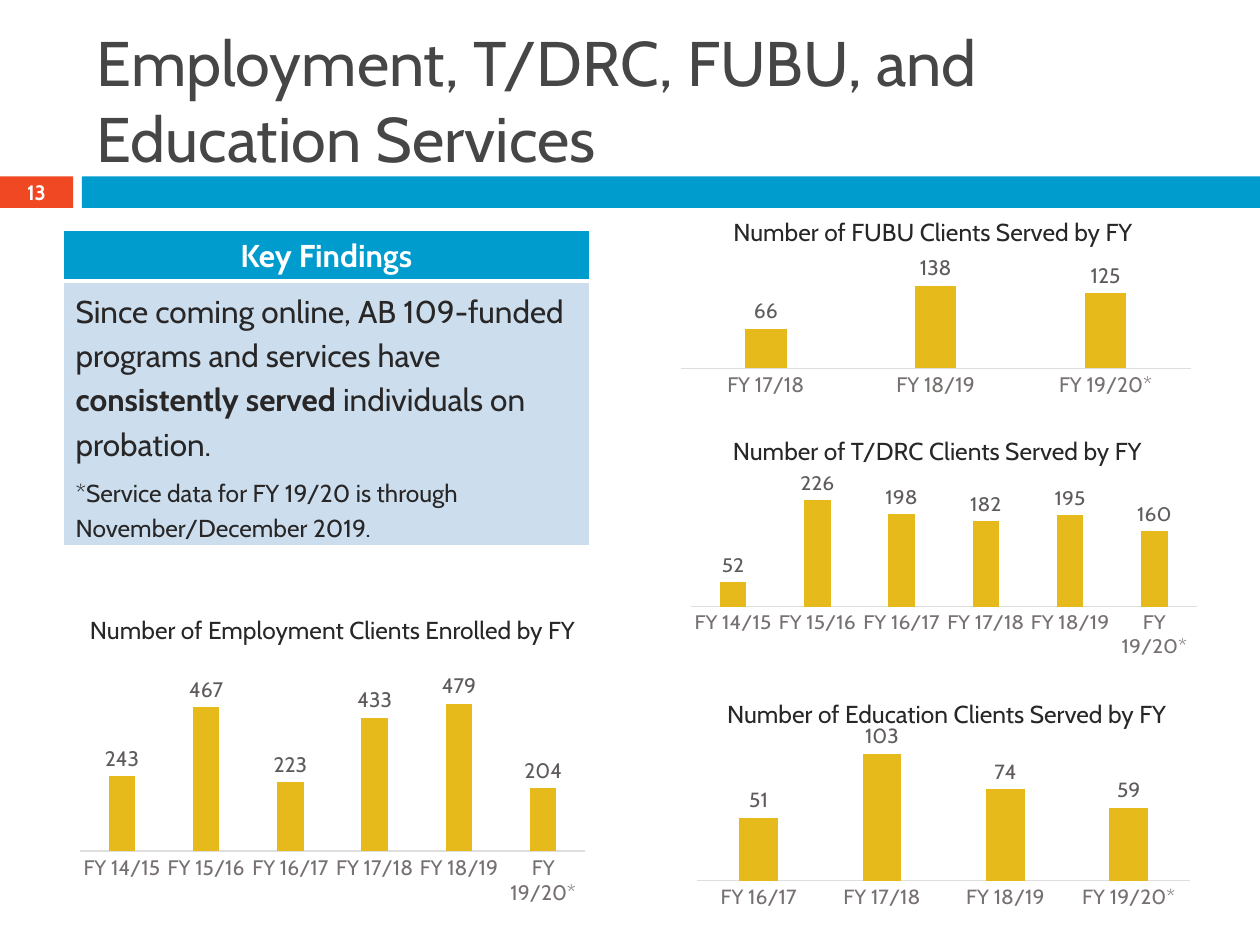
from pptx import Presentation
from pptx.chart.data import CategoryChartData
from pptx.dml.color import RGBColor
from pptx.enum.chart import XL_CHART_TYPE as ChartType
from pptx.enum.chart import XL_LABEL_POSITION as LabelPosition
from pptx.enum.chart import XL_TICK_MARK as TickMark
from pptx.enum.shapes import MSO_SHAPE as Shape
from pptx.enum.text import MSO_ANCHOR as Anchor
from pptx.enum.text import MSO_AUTO_SIZE as AutoSize
from pptx.enum.text import PP_ALIGN as Align
from pptx.oxml import parse_xml
from pptx.oxml.ns import nsdecls
from pptx.util import Inches, Pt

BLUE, RED, GOLD, PALE, WHITE = "009CCE", "EF4823", "E6BA1A", "CCDEED", "FFFFFF"
INK, TITLE_GRAY, LABEL_GRAY, AXIS_GRAY, RULE_GRAY = (
    "282626", "464646", "5F5B5B", "767070", "DFDEDE")


def color(value):
    return RGBColor.from_string(value)


def box(*lengths):
    return [Inches(length) for length in lengths]


class SlideBuilder:
    font_name = "Cabin"

    def __init__(self, slide):
        self.slide = slide

    def style(self, font, size, ink, bold=None):
        font.name = self.font_name
        font.size = Pt(size)
        font.color.rgb = color(ink)
        font.bold = bold

    def bar(self, at, fill):
        shape = self.slide.shapes.add_shape(Shape.RECTANGLE, *box(*at))
        shape.shadow.inherit = False
        shape.fill.solid()
        shape.fill.fore_color.rgb = color(fill)
        shape.line.fill.background()

    def text(self, at, content, size, ink=INK, bold=None, align=Align.CENTER,
             anchor=Anchor.TOP, auto_size=AutoSize.NONE):
        frame = self.slide.shapes.add_textbox(*box(*at)).text_frame
        frame.word_wrap = True
        frame.auto_size = auto_size
        frame.vertical_anchor = anchor
        paragraph = frame.paragraphs[0]
        paragraph.text = content
        paragraph.alignment = align
        self.style(paragraph.font, size, ink, bold)

    def chart(self, at, years, values, gap=219, overlap=0, layout=None):
        data = CategoryChartData()
        data.categories = [f"FY {year}" for year in years]
        data.add_series("Series 1", values)
        chart = self.slide.shapes.add_chart(
            ChartType.COLUMN_CLUSTERED, *box(*at), data).chart
        chart.has_legend = chart.has_title = False
        self.style(chart.font, 10, INK)

        value_axis = chart.value_axis
        value_axis.visible = False
        value_axis.has_major_gridlines = False
        value_axis.minimum_scale = 0
        category_axis = chart.category_axis
        category_axis.major_tick_mark = TickMark.NONE
        category_axis.format.line.color.rgb = color(RULE_GRAY)
        category_axis.format.line.width = Pt(0.75)
        self.style(category_axis.tick_labels.font, 12, AXIS_GRAY)

        plot = chart.plots[0]
        plot.gap_width, plot.overlap = gap, overlap
        plot.vary_by_categories = False
        fill = plot.series[0].format.fill
        fill.solid()
        fill.fore_color.rgb = color(GOLD)
        plot.has_data_labels = True
        labels = plot.data_labels
        labels.show_value = True
        labels.position = LabelPosition.OUTSIDE_END
        self.style(labels.font, 12, LABEL_GRAY)
        if layout:
            self.place_plot(chart, layout)

    def place_plot(self, chart, layout):
        modes = "".join(f'<c:{key}Mode val="edge"/>' for key in "xy")
        sizes = "".join(f'<c:{key} val="{value}"/>' for key, value in zip("xywh", layout))
        plot_area = chart.plots[0]._element.getparent()
        for element in plot_area.findall("{*}layout"):
            plot_area.remove(element)
        plot_area.insert(0, parse_xml(
            f'<c:layout {nsdecls("c")}><c:manualLayout><c:layoutTarget val="inner"/>'
            f'{modes}{sizes}</c:manualLayout></c:layout>'))

    def borders(self, cell, bottom):
        properties = cell._tc.get_or_add_tcPr()
        widths = {"L": 1, "R": 1, "T": 1, "B": bottom}
        for index, (side, width) in enumerate(widths.items()):
            properties.insert(index, parse_xml(
                f'<a:ln{side} {nsdecls("a")} w="{Pt(width)}"><a:solidFill>'
                f'<a:srgbClr val="{WHITE}"/></a:solidFill></a:ln{side}>'))

    def findings(self, at, heading, body, note, heights):
        table = self.slide.shapes.add_table(2, 1, *box(*at)).table
        table.first_row = table.horz_banding = False
        header, content = table.cell(0, 0), table.cell(1, 0)
        for row, height in zip(table.rows, heights):
            row.height = Inches(height)
        for cell, fill, bottom in ((header, BLUE, 3), (content, PALE, 1)):
            cell.fill.solid()
            cell.fill.fore_color.rgb = color(fill)
            self.borders(cell, bottom)

        paragraph = header.text_frame.paragraphs[0]
        paragraph.text = heading
        paragraph.alignment = Align.CENTER
        self.style(paragraph.font, 18, WHITE, True)

        first = content.text_frame.paragraphs[0]
        for words, bold in body:
            run = first.add_run()
            run.text = words
            self.style(run.font, 18, INK, bold)
        second = content.text_frame.add_paragraph()
        second.text = note
        second.space_before = Pt(6)
        self.style(second.font, 14, INK)
        first.line_spacing = second.line_spacing = 1.15


def main():
    presentation = Presentation()
    presentation.slide_width, presentation.slide_height = box(10, 7.5)
    builder = SlideBuilder(presentation.slides.add_slide(presentation.slide_layouts[6]))

    builder.bar((0, 1.4, 0.58, 0.25), RED)
    builder.bar((0.65, 1.4, 9.35, 0.25), BLUE)
    builder.text((0.67, 0.25, 8.92, 1.08), "Employment, T/DRC, FUBU, and Education Services",
                 36, TITLE_GRAY, align=Align.LEFT, anchor=Anchor.MIDDLE)
    builder.text((0, 1.39, 0.58, 0.27), "13", 11.9, WHITE, True, anchor=Anchor.MIDDLE)

    headings = (
        ((0.55, 4.83, 4.18, 0.34), "Employment Clients Enrolled"),
        ((5.45, 3.41, 3.98, 0.34), "T/DRC Clients Served"),
        ((5.23, 1.67, 4.35, 0.34), "FUBU Clients Served"),
        ((5.45, 5.5, 4.13, 0.34), "Education Clients Served"),
    )
    for at, subject in headings:
        builder.text(at, f"Number of {subject} by FY", 14,
                     auto_size=AutoSize.SHAPE_TO_FIT_TEXT)

    years = ("14/15", "15/16", "16/17", "17/18", "18/19", "19/20*")
    builder.chart((5.4, 3.75, 4.18, 1.5), years, (52, 226, 198, 182, 195, 160))
    builder.chart((5.45, 5.75, 4.08, 1.5), years[2:], (51, 103, 74, 59), overlap=-27)
    builder.chart((0.55, 5.25, 4.18, 1.98), years, (243, 467, 223, 433, 479, 204))
    builder.chart((5.23, 2, 4.35, 1.17), years[3:], (66, 138, 125), 310, -27,
                  (0.04, 0.14, 0.93, 0.65))

    builder.findings(
        (0.5, 1.83, 4.18, 2.48), "Key Findings",
        (("Since coming online, AB 109-funded programs and services have ", False),
         ("consistently served", True),
         (" individuals on probation.", False)),
        "*Service data for FY 19/20 is through November/December 2019.",
        (0.38, 2.1))
    presentation.save("out.pptx")


if __name__ == "__main__":
    main()
